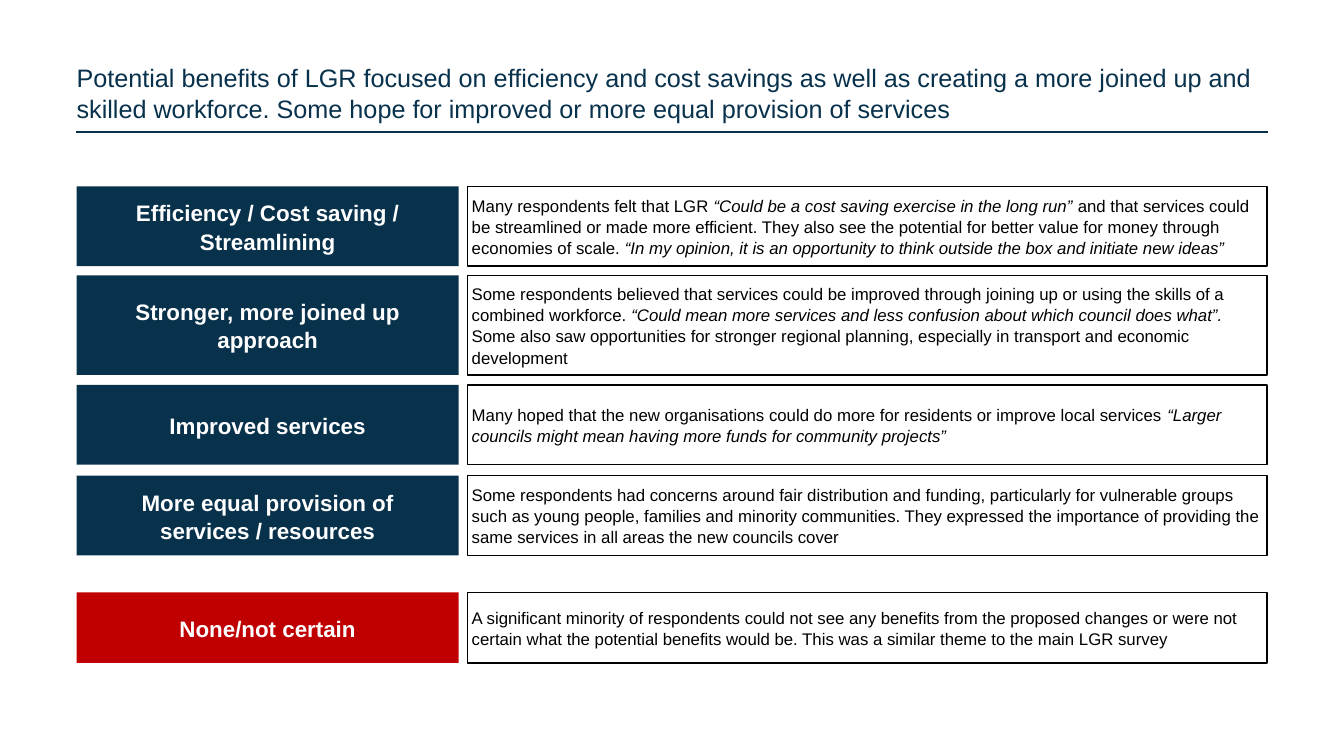
from lxml.etree import SubElement
from pptx import Presentation
from pptx.dml.color import RGBColor
from pptx.enum.shapes import MSO_CONNECTOR, MSO_SHAPE
from pptx.enum.text import MSO_ANCHOR as ANCHOR, PP_ALIGN as ALIGN
from pptx.oxml.ns import qn
from pptx.util import Pt

NAVY = RGBColor(0x08, 0x31, 0x4C)
RULE = RGBColor(0x08, 0x32, 0x4B)
RED = RGBColor(0xC0, 0x00, 0x00)
WHITE = RGBColor(0xFF, 0xFF, 0xFF)
BLACK = RGBColor(0x00, 0x00, 0x00)

LEFT, LABEL_W = 54.7, 272.9
DETAIL_X, DETAIL_W = 334.1, 571

TITLE = (
    "Potential benefits of LGR focused on efficiency and cost savings as well as "
    "creating a more joined up and skilled workforce. Some hope for improved or "
    "more equal provision of services"
)

# Each detail alternates plain text and italic quotation.
THEMES = [
    (133.2, 56.9, NAVY, "Efficiency / Cost saving / Streamlining", [
        "Many respondents felt that LGR ",
        "“Could be a cost saving exercise in the long run” ",
        "and that services could be streamlined or made more efficient. They also see "
        "the potential for better value for money through economies of scale. ",
        "“In my opinion, it is an opportunity to think outside the box and initiate new ideas”",
    ]),
    (196.7, 71.2, NAVY, "Stronger, more joined up approach", [
        "Some respondents believed that services could be improved through joining up "
        "or using the skills of a combined workforce. ",
        "“Could mean more services and less confusion about which council does what”. ",
        "Some also saw opportunities for stronger regional planning, especially in "
        "transport and economic development",
    ]),
    (275, 56.9, NAVY, "Improved services", [
        "Many hoped that the new organisations could do more for residents or improve "
        "local services ",
        "“Larger councils might mean having more funds for community projects”",
    ]),
    (339.8, 56.9, NAVY, "More equal provision of services / resources", [
        "Some respondents had concerns around fair distribution and funding, "
        "particularly for vulnerable groups such as young people, families and minority "
        "communities. They expressed the importance of providing the same services in "
        "all areas the new councils cover",
    ]),
    (423.2, 50.4, RED, "None/not certain", [
        "A significant minority of respondents could not see any benefits from the "
        "proposed changes or were not certain what the potential benefits would be. "
        "This was a similar theme to the main LGR survey",
    ]),
]


def write(tf, parts, size=12, color=BLACK, bold=False, align=ALIGN.LEFT,
          anchor=ANCHOR.MIDDLE, inset=(0, 0), font="Arial"):
    tf.word_wrap = True
    tf.vertical_anchor = anchor
    tf.margin_left = tf.margin_right = Pt(inset[0])
    tf.margin_top = tf.margin_bottom = Pt(inset[1])
    p = tf.paragraphs[0]
    p.alignment = align
    p.line_spacing = 1.05
    for i, text in enumerate(parts):
        r = p.add_run()
        r.text = text
        r.font.name = font
        r.font.size = Pt(size)
        r.font.bold = bold
        r.font.italic = i % 2 == 1
        r.font.color.rgb = color


class Deck:
    def __init__(self):
        self.prs = Presentation()
        self.prs.slide_width, self.prs.slide_height = Pt(960), Pt(540)
        self.s = self.prs.slides.add_slide(self.prs.slide_layouts[5])

    def title(self, text, x, y, w, h):
        sp = self.s.shapes.title
        sp.left, sp.top, sp.width, sp.height = Pt(x), Pt(y), Pt(w), Pt(h)
        write(sp.text_frame, [text], size=18, color=NAVY, anchor=ANCHOR.TOP)

    def rule(self, x1, x2, y):
        line = self.s.shapes.add_connector(
            MSO_CONNECTOR.STRAIGHT, Pt(x1), Pt(y), Pt(x2), Pt(y))
        line.line.color.rgb = RULE
        line.line.width = Pt(1.25)
        SubElement(line._element.spPr, qn("a:effectLst"))

    def box(self, x, y, w, h, fill, parts, outline=None, **style):
        sp = self.s.shapes.add_shape(MSO_SHAPE.RECTANGLE, Pt(x), Pt(y), Pt(w), Pt(h))
        sp.shadow.inherit = False
        sp.fill.solid()
        sp.fill.fore_color.rgb = fill
        if outline is None:
            sp.line.fill.background()
        else:
            sp.line.color.rgb = outline
            sp.line.width = Pt(1)
        write(sp.text_frame, parts, **style)


def main():
    deck = Deck()
    deck.rule(54, 905.8, 94.3)
    deck.title(TITLE, LEFT, 43.2, 850.4, 43.9)
    for y, h, fill, label, detail in THEMES:
        deck.box(LEFT, y, LABEL_W, h, fill, [label], size=16, color=WHITE,
                 bold=True, align=ALIGN.CENTER, inset=(28, 3.6))
        deck.box(DETAIL_X, y, DETAIL_W, h, WHITE, detail, outline=BLACK, inset=(2.9, 2.9))
    deck.prs.save("out.pptx")


if __name__ == "__main__":
    main()
